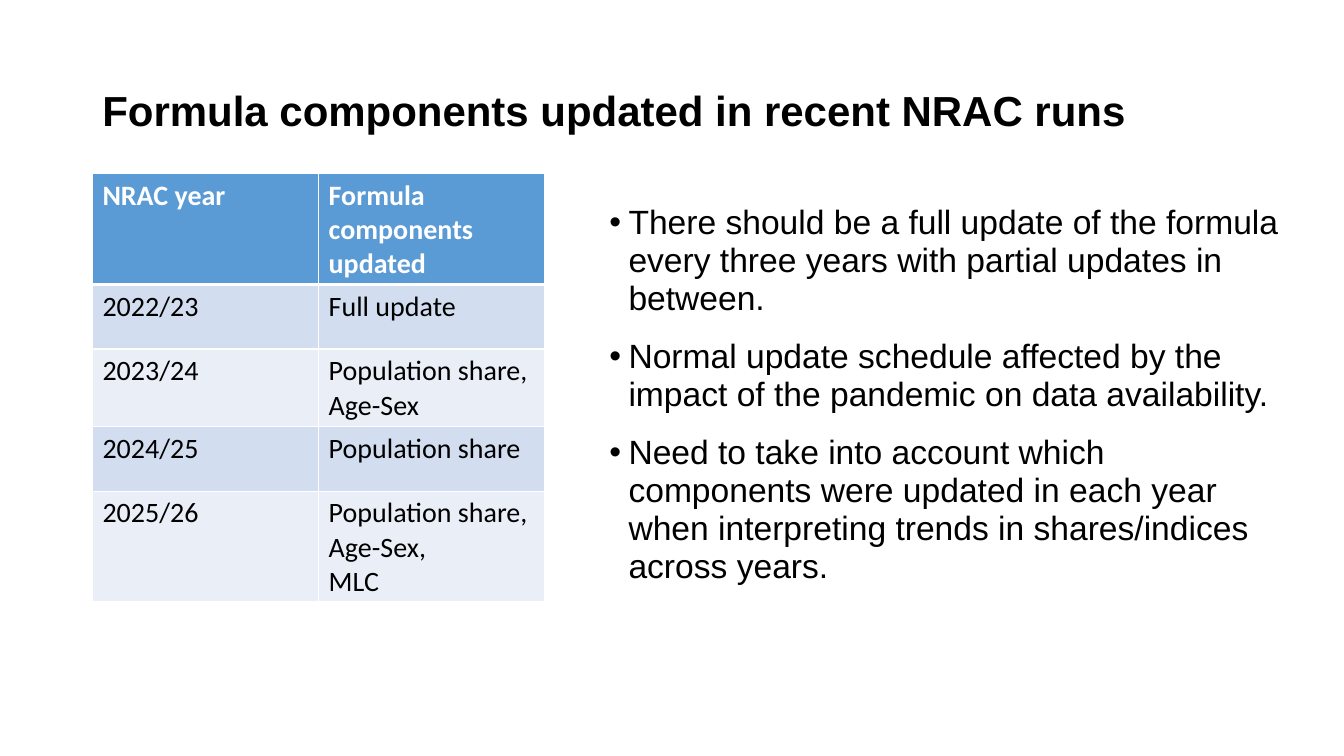
from pptx import Presentation
from pptx.dml.color import RGBColor
from pptx.enum.text import MSO_ANCHOR
from pptx.oxml import parse_xml
from pptx.oxml.ns import nsdecls
from pptx.util import Cm, Pt

TITLE = "Formula components updated in recent NRAC runs"
UPDATES = [
    ("NRAC year", "Formula components updated"),
    ("2022/23", "Full update"),
    ("2023/24", "Population share,\nAge-Sex"),
    ("2024/25", "Population share"),
    ("2025/26", "Population share,\nAge-Sex,\nMLC"),
]
POINTS = [
    "There should be a full update of the formula every three years with partial updates in between.",
    "Normal update schedule affected by the impact of the pandemic on data availability.",
    "Need to take into account which components were updated in each year "
    "when interpreting trends in shares/indices across years.",
]

THEME = {
    "title": {"name": "Arial", "size": Pt(30), "bold": True, "color": "000000"},
    "points": {"name": "Arial", "size": Pt(24), "bold": False, "color": "000000"},
    "header": {"name": "Calibri", "size": Pt(20), "bold": True, "color": "FFFFFF"},
    "body": {"name": "Calibri", "size": Pt(20), "bold": False, "color": "000000"},
    "header_fill": "5B9BD5",
    "band_fills": ("EAEFF7", "D2DEEF"),
    "border": "FFFFFF",
}

LEFT = Cm(2.33)
COLUMN_WIDTH, ROW_HEIGHT = Cm(5.7), Cm(1.63)
TITLE_BOX = LEFT, Cm(1.01), Cm(29.21), Cm(3.68)
TABLE_TOP = Cm(4.37)
POINTS_BOX = Cm(15.11), Cm(5.03), Cm(17.42), Cm(10.11)
BULLET_INDENT = Cm(0.48)


def style(paragraph, role):
    for attribute, value in THEME[role].items():
        if attribute == "color":
            paragraph.font.color.rgb = RGBColor.from_string(value)
        else:
            setattr(paragraph.font, attribute, value)


def add_text_frame(slide, box):
    frame = slide.shapes.add_textbox(*box).text_frame
    frame.word_wrap = True
    return frame


def set_borders(cell, bottom_width):
    """Draw the cell's four edges; they must precede its fill in the XML."""
    widths = {"L": Pt(1), "R": Pt(1), "T": Pt(1), "B": bottom_width}
    for position, (side, width) in enumerate(widths.items()):
        edge = parse_xml(
            f'<a:ln{side} {nsdecls("a")} w="{width}"><a:solidFill>'
            f'<a:srgbClr val="{THEME["border"]}"/></a:solidFill></a:ln{side}>')
        cell._tc.get_or_add_tcPr().insert(position, edge)


def add_title(slide):
    frame = add_text_frame(slide, TITLE_BOX)
    frame.vertical_anchor = MSO_ANCHOR.MIDDLE
    heading = frame.paragraphs[0]
    heading.text = TITLE
    heading.line_spacing = 0.9
    style(heading, "title")


def add_updates(slide):
    rows, columns = len(UPDATES), len(UPDATES[0])
    table = slide.shapes.add_table(
        rows, columns, LEFT, TABLE_TOP,
        COLUMN_WIDTH * columns, ROW_HEIGHT * rows).table
    for r, update in enumerate(UPDATES):
        is_header = r == 0
        fill = THEME["header_fill"] if is_header else THEME["band_fills"][r % 2]
        for c, wording in enumerate(update):
            cell = table.cell(r, c)
            cell.text = wording
            cell.fill.solid()
            cell.fill.fore_color.rgb = RGBColor.from_string(fill)
            set_borders(cell, Pt(3 if is_header else 1))
            for paragraph in cell.text_frame.paragraphs:
                style(paragraph, "header" if is_header else "body")


def add_points(slide):
    frame = add_text_frame(slide, POINTS_BOX)
    for i, point in enumerate(POINTS):
        paragraph = frame.add_paragraph() if i else frame.paragraphs[0]
        paragraph.text = point
        paragraph.line_spacing = 0.94
        paragraph.space_before = Pt(7.5 if i else 0)
        paragraph.space_after = Pt(7)
        properties = paragraph._p.get_or_add_pPr()
        properties.set("marL", str(BULLET_INDENT))
        properties.set("indent", str(-BULLET_INDENT))
        for bullet in ('buFont typeface="Arial"', 'buChar char="•"'):
            tag, attribute = bullet.split(" ")
            properties.append(parse_xml(f'<a:{tag} {nsdecls("a")} {attribute}/>'))
        style(paragraph, "points")


def main():
    deck = Presentation()
    deck.slide_width, deck.slide_height = Cm(33.87), Cm(19.05)
    slide = deck.slides.add_slide(deck.slide_layouts[6])
    add_title(slide)
    add_updates(slide)
    add_points(slide)
    deck.save("out.pptx")


if __name__ == "__main__":
    main()
